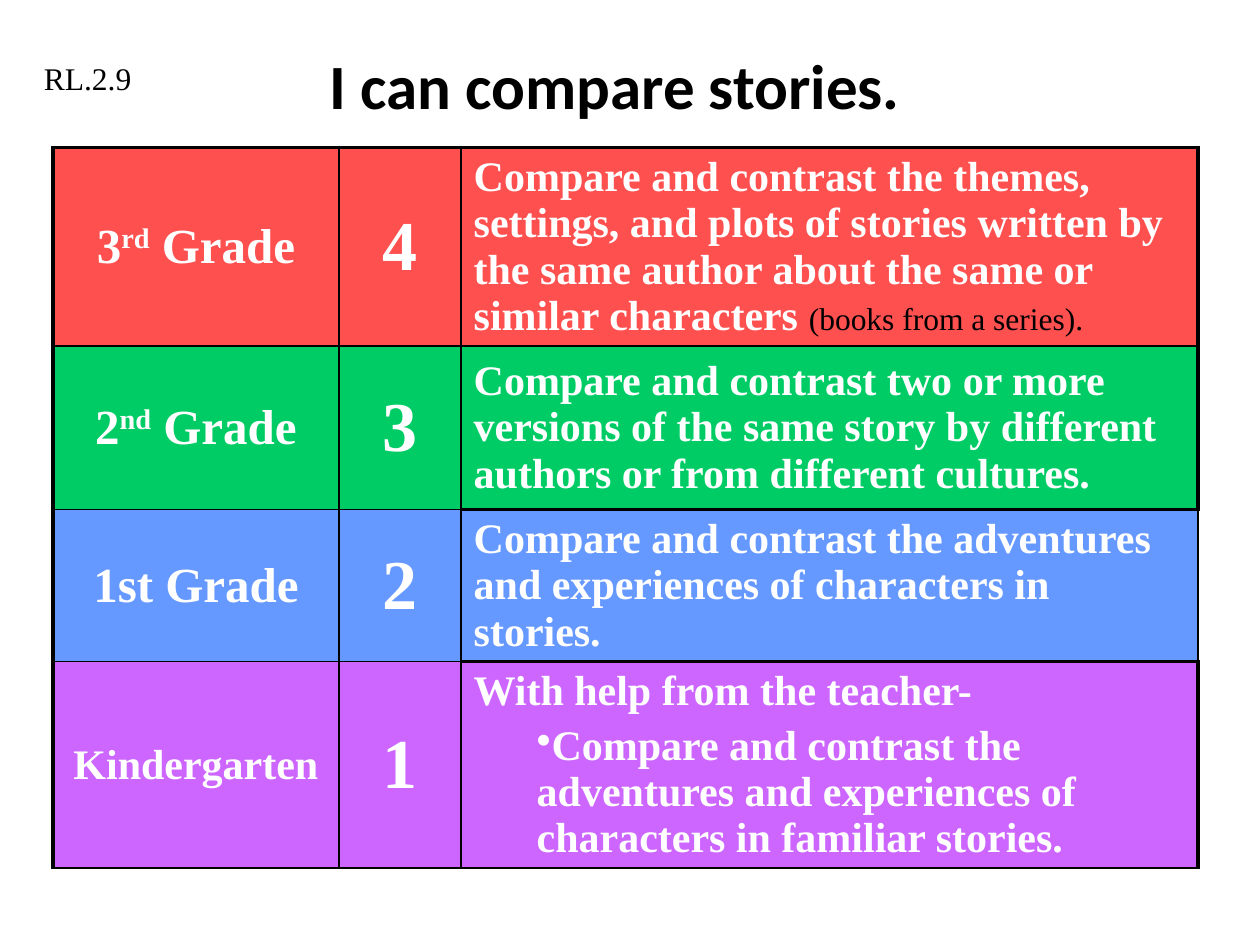
from pptx import Presentation
from pptx.dml.color import RGBColor
from pptx.enum.text import MSO_ANCHOR, MSO_AUTO_SIZE, PP_ALIGN
from pptx.oxml.xmlchemy import OxmlElement
from pptx.util import Inches, Pt

BLACK = RGBColor(0x00, 0x00, 0x00)
WHITE = RGBColor(0xFF, 0xFF, 0xFF)
RED = RGBColor(0xFF, 0x50, 0x50)
GREEN = RGBColor(0x00, 0xCC, 0x66)
BLUE = RGBColor(0x66, 0x99, 0xFF)
PURPLE = RGBColor(0xCC, 0x66, 0xFF)
SERIF = "Times New Roman"

# Content
TITLE = "I can compare stories."
STANDARD = "RL.2.9"
# Each row: fill, grade parts (the second is raised), grade size, score, goal, aside, bullet
LEVELS = [
    (RED, ["3", "rd", " Grade"], 28, "4",
     "Compare and contrast the themes, settings, and plots of stories written by "
     "the same author about the same or similar characters ",
     "(books from a series).", None),
    (GREEN, ["2", "nd", " Grade"], 28, "3",
     "Compare and contrast two or more versions of the same story by different "
     "authors or from different cultures.", None, None),
    (BLUE, ["1st Grade"], 28, "2",
     "Compare and contrast the adventures and experiences of characters in stories.",
     None, None),
    (PURPLE, ["Kindergarten"], 24, "1", "With help from the teacher-", None,
     "Compare and contrast the adventures and experiences of characters in "
     "familiar stories."),
]
COL_WIDTHS = [2.27, 0.97, 5.85]
ROW_HEIGHTS = [1.1, 1.3, 1.1, 1.1]
# Border widths in points: left, right, top, bottom of each cell
BORDERS = [
    [(2.25, 1, 2.25, 1.5), (1, 1, 2.25, 1.5), (1, 2.25, 2.25, 1.5)],
    [(2.25, 1, 1.5, 1), (1, 1, 1.5, 1), (1, 2.25, 1.5, 1.5)],
    [(2.25, 1.5, 1, 1), (1.5, 1.5, 1, 1), (1.5, 1.5, 1.5, 1.5)],
    [(2.25, 1, 1, 1.5), (1, 1, 1, 1.5), (1, 2.25, 1.5, 1.5)],
]


def add_run(p, text, size, color=WHITE, bold=True, name=SERIF, raised=False):
    r = p.add_run()
    r.text = text
    for key, value in dict(size=Pt(size), bold=bold, name=name).items():
        setattr(r.font, key, value)
    r.font.color.rgb = color
    if raised:
        r.font._element.set("baseline", "30000")


def set_borders(cell, widths):
    tcPr = cell._tc.get_or_add_tcPr()
    for i, (side, width) in enumerate(zip("LRTB", widths)):
        ln = OxmlElement(f"a:ln{side}")
        ln.set("w", str(Pt(width)))
        fill = OxmlElement("a:solidFill")
        clr = OxmlElement("a:srgbClr")
        clr.set("val", str(BLACK))
        fill.append(clr)
        ln.append(fill)
        tcPr.insert(i, ln)


def add_bullet(p, indent):
    pPr = p._p.get_or_add_pPr()
    pPr.set("marL", str(Inches(indent)))
    pPr.set("indent", "0")
    bu = OxmlElement("a:buChar")
    bu.set("char", "•")
    pPr.append(bu)


prs = Presentation()
prs.slide_width, prs.slide_height = Inches(10), Inches(7.5)
s = prs.slides.add_slide(prs.slide_layouts[5])

# Title
title = s.shapes.title
title.left, title.top = Inches(0.17), Inches(0.17)
title.width, title.height = Inches(9.42), Inches(1)
tf = title.text_frame
tf.auto_size = MSO_AUTO_SIZE.NONE
tf.vertical_anchor = MSO_ANCHOR.MIDDLE
tf.paragraphs[0].alignment = PP_ALIGN.CENTER
add_run(tf.paragraphs[0], TITLE, 36, BLACK, name="Calibri")

# Table of grade levels
frame = s.shapes.add_table(len(LEVELS), len(COL_WIDTHS), Inches(0.42), Inches(1.17),
                           Inches(9.08), Inches(6.08))
table = frame.table
table.first_row = table.horz_banding = False
for col, width in zip(table.columns, COL_WIDTHS):
    col.width = Inches(width)
for row, height in zip(table.rows, ROW_HEIGHTS):
    row.height = Inches(height)
frame.height = Inches(6.08)

for row, level, borders in zip(table.rows, LEVELS, BORDERS):
    color, grade, grade_size, score, goal, aside, bullet = level
    for cell, widths in zip(row.cells, borders):
        cell.fill.solid()
        cell.fill.fore_color.rgb = color
        cell.vertical_anchor = MSO_ANCHOR.MIDDLE
        set_borders(cell, widths)
    grade_p, score_p, goal_p = [c.text_frame.paragraphs[0] for c in row.cells]
    grade_p.alignment = score_p.alignment = PP_ALIGN.CENTER
    for i, part in enumerate(grade):
        add_run(grade_p, part, grade_size, raised=i == 1)
    add_run(score_p, score, 40)
    add_run(goal_p, goal, 24)
    if aside:
        add_run(goal_p, aside, 18, BLACK, bold=False)
    if bullet:
        p = row.cells[2].text_frame.add_paragraph()
        p.level = 1
        p.space_before = Pt(4.8)
        add_bullet(p, 0.5)
        add_run(p, bullet, 24)

# Standard code
sp = s.shapes.add_textbox(Inches(0.25), Inches(0.42), Inches(1.42), Inches(0.4))
tf = sp.text_frame
tf.word_wrap = True
tf.auto_size = MSO_AUTO_SIZE.SHAPE_TO_FIT_TEXT
add_run(tf.paragraphs[0], STANDARD, 18, BLACK, bold=False)

prs.save("out.pptx")
